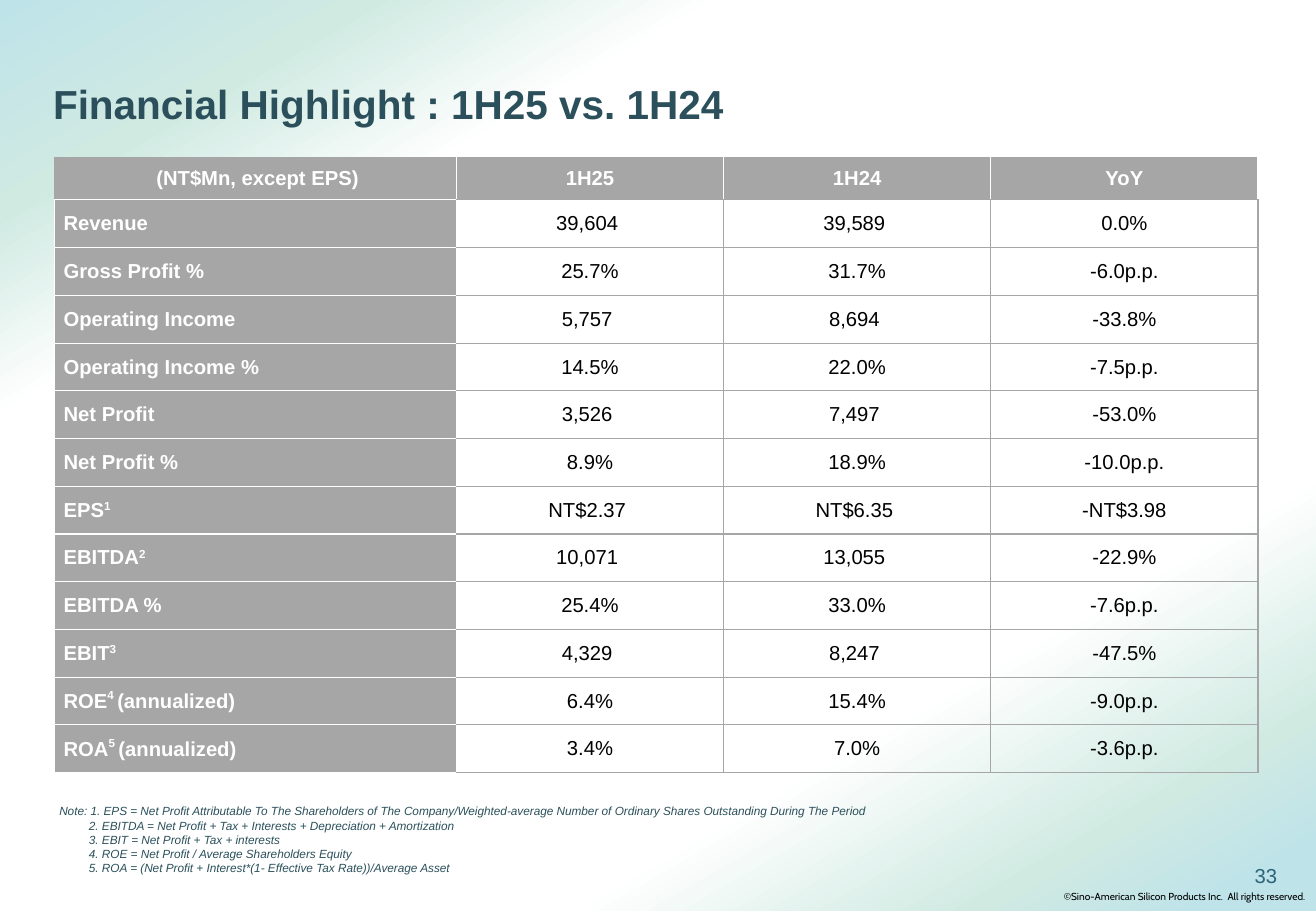
from lxml import etree
from pptx import Presentation
from pptx.dml.color import RGBColor
from pptx.enum.shapes import MSO_SHAPE
from pptx.enum.text import MSO_ANCHOR, PP_ALIGN
from pptx.oxml import parse_xml
from pptx.oxml.ns import nsdecls, qn
from pptx.util import Cm, Pt

RECTANGLE = MSO_SHAPE.RECTANGLE
TOP, MIDDLE = MSO_ANCHOR.TOP, MSO_ANCHOR.MIDDLE
LEFT, CENTER = PP_ALIGN.LEFT, PP_ALIGN.CENTER

WIDTH, HEIGHT = 27.51, 19.05
GREY, WHITE, BLACK, TEAL, BLUE = "A6A6A6", "FFFFFF", "000000", "2B505B", "2C6376"
GRADIENT = [(0, "BEE3E9"), (13, "D0EAE2"), (25, WHITE),
            (74, WHITE), (88, "D0EAE2"), (96, "BEE3E9")]

HEADERS = ["(NT$Mn, except EPS)", "1H25", "1H24", "YoY"]
ROWS = [
    (["Revenue"], "39,604 ", "39,589 ", "0.0%"),
    (["Gross Profit %"], "25.7%", "31.7%", "-6.0p.p."),
    (["Operating Income"], "5,757 ", "8,694 ", "-33.8%"),
    (["Operating Income %"], "14.5%", "22.0%", "-7.5p.p."),
    (["Net Profit"], "3,526 ", "7,497 ", "-53.0%"),
    (["Net Profit %"], "8.9%", "18.9%", "-10.0p.p."),
    (["EPS", "1"], "NT$2.37 ", "NT$6.35 ", "-NT$3.98"),
    (["EBITDA", "2"], "10,071 ", "13,055 ", "-22.9%"),
    (["EBITDA %"], "25.4%", "33.0%", "-7.6p.p."),
    (["EBIT", "3"], "4,329 ", "8,247 ", "-47.5%"),
    (["ROE", "4 ", "(annualized)"], "6.4%", "15.4%", "-9.0p.p."),
    (["ROA", "5 ", "(annualized)"], "3.4%", "7.0%", "-3.6p.p."),
]
NOTES = [
    "Note: 1. EPS = Net Profit Attributable To The Shareholders of The Company/"
    "Weighted-average Number of Ordinary Shares Outstanding During The Period",
    "2. EBITDA = Net Profit + Tax + Interests + Depreciation + Amortization",
    "3. EBIT = Net Profit + Tax + interests",
    "4. ROE = Net Profit / Average Shareholders Equity",
    "5. ROA = (Net Profit + Interest*(1- Effective Tax Rate))/Average Asset",
]


def color(value):
    """Turn a hex string into a colour."""
    return RGBColor.from_string(value)


def style(paragraph, size, value, bold=False, italic=False, name="Arial"):
    """Set the font of a whole paragraph."""
    font = paragraph.font
    font.name, font.size, font.bold, font.italic = name, Pt(size), bold, italic
    font.color.rgb = color(value)


def add_text(slide, box, lines, size, value, anchor=TOP, spacing=1.0, hanging=0, **font):
    """Add a text box; lines after the first are indented by hanging."""
    frame = slide.shapes.add_textbox(*map(Cm, box)).text_frame
    frame.word_wrap = True
    frame.vertical_anchor = anchor
    for index, line in enumerate(lines):
        paragraph = frame.add_paragraph() if index else frame.paragraphs[0]
        paragraph.text = line
        paragraph.line_spacing = spacing
        if index and hanging:
            paragraph._p.get_or_add_pPr().set("marL", str(Cm(hanging)))
        style(paragraph, size, value, **font)
    return frame


def add_background(slide, box):
    """Cover the box with the diagonal gradient."""
    shape = slide.shapes.add_shape(RECTANGLE, *map(Cm, box))
    shape.shadow.inherit = False
    shape.line.fill.background()
    shape.fill.gradient()
    gradient = shape._element.spPr.find(qn("a:gradFill"))
    stops = "".join(f'<a:gs pos="{position * 1000}"><a:srgbClr val="{value}"/></a:gs>'
                    for position, value in GRADIENT)
    gradient.getparent().replace(gradient, parse_xml(
        f'<a:gradFill {nsdecls("a")} rotWithShape="1"><a:gsLst>{stops}</a:gsLst>'
        f'<a:lin ang="{60 * 60000}" scaled="0"/></a:gradFill>'))


def set_borders(cell, left, right, top, bottom):
    """Draw the four borders of a cell in the given colours."""
    properties = cell._tc.get_or_add_tcPr()
    for index, (side, value) in enumerate(zip("LRTB", (left, right, top, bottom))):
        line = etree.Element(qn(f"a:ln{side}"), w=str(Pt(0.75)))
        fill = etree.SubElement(line, qn("a:solidFill"))
        etree.SubElement(fill, qn("a:srgbClr"), val=value)
        properties.insert(index, line)


def fill_cell(cell, parts, shaded, alignment, borders, margin=0):
    """Write a cell whose second part, if any, is superscript."""
    cell.vertical_anchor = MIDDLE
    cell.margin_left, cell.margin_right = Cm(margin), Cm(margin / 2)
    cell.margin_top = cell.margin_bottom = 0
    if shaded:
        cell.fill.solid()
        cell.fill.fore_color.rgb = color(GREY)
    else:
        cell.fill.background()
    set_borders(cell, *borders)
    paragraph = cell.text_frame.paragraphs[0]
    paragraph.alignment = alignment
    for index, part in enumerate(parts):
        run = paragraph.add_run()
        run.text = part
        if index == 1:
            run.font._element.set("baseline", "34000" if len(parts) == 2 else "45000")
    style(paragraph, 12, WHITE if shaded else BLACK, bold=shaded)


def add_highlights(slide, box):
    """Add the table of half-year results."""
    left, top, width, height = box
    label_width, header_height = 8.41, 0.89
    value_width = (width - label_width) / (len(HEADERS) - 1)
    row_height = (height - header_height) / len(ROWS)
    table = slide.shapes.add_table(len(ROWS) + 1, len(HEADERS), *map(Cm, box)).table
    table.first_row = table.horz_banding = False
    for index, column in enumerate(table.columns):
        column.width = Cm(value_width if index else label_width)
    for index, row in enumerate(table.rows):
        row.height = Cm(row_height if index else header_height)
    for index, header in enumerate(HEADERS):
        borders = (WHITE, WHITE, GREY, GREY) if index else (GREY, WHITE, GREY, WHITE)
        fill_cell(table.cell(0, index), [header], True, CENTER, borders, 0 if index else 0.2)
    for row, (label, *values) in enumerate(ROWS, 1):
        fill_cell(table.cell(row, 0), label, True, LEFT, [WHITE] * 4, 0.2)
        for column, value in enumerate(values, 1):
            borders = (WHITE if column == 1 else GREY, GREY, GREY, GREY)
            fill_cell(table.cell(row, column), [value], False, CENTER, borders)


def add_footer(slide, box):
    """Add the page number and the copyright line."""
    left, top, width, height = box
    add_text(slide, (left + 4.04, top, 1.65, 1.27), ["33"], 12, BLUE)
    add_text(slide, (left + 0.05, top + 0.43, width, 0.58),
             ["©Sino-American Silicon Products Inc.  All rights reserved."],
             6, BLACK, spacing=1.5, name="Cabin")


def main():
    """Build the slide and save it."""
    presentation = Presentation()
    presentation.slide_width, presentation.slide_height = Cm(WIDTH), Cm(HEIGHT)
    slide = presentation.slides.add_slide(presentation.slide_layouts[6])
    add_background(slide, (0, 0, WIDTH, HEIGHT))
    add_text(slide, (0.86, 1.14, 24, 2.16), ["Financial Highlight : 1H25 vs. 1H24"],
             24, TEAL, anchor=MIDDLE, spacing=0.9, bold=True)
    add_highlights(slide, (1.13, 3.29, 25.17, 12.87))
    add_text(slide, (0.99, 16.69, 17.88, 1.75), NOTES, 7, TEAL, hanging=0.62, italic=True)
    add_footer(slide, (21.94, 17.93, 6.6, 1.12))
    presentation.save("out.pptx")


if __name__ == "__main__":
    main()
